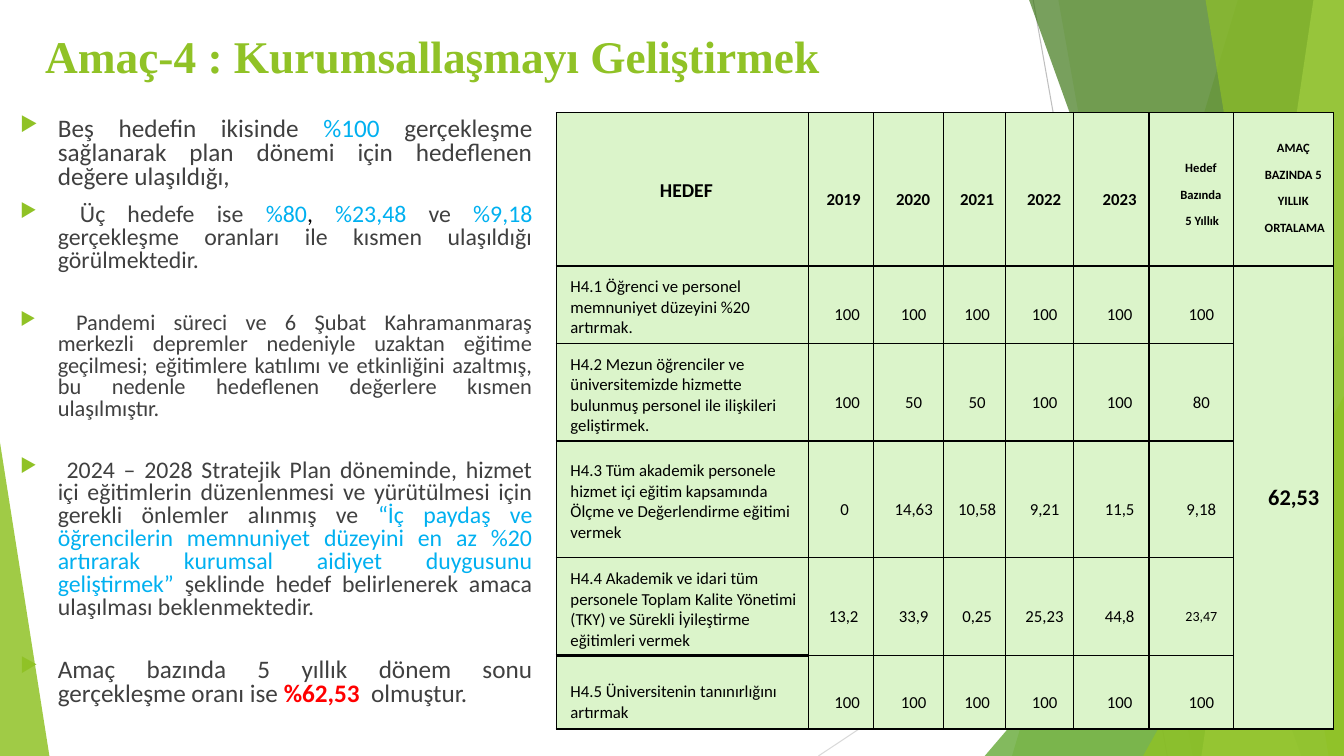
from lxml import etree
from pptx import Presentation
from pptx.dml.color import RGBColor
from pptx.enum.shapes import MSO_CONNECTOR, MSO_SHAPE
from pptx.enum.text import MSO_ANCHOR, PP_ALIGN
from pptx.oxml.ns import qn
from pptx.util import Pt

STRAIGHT = MSO_CONNECTOR.STRAIGHT
TRIANGLE = MSO_SHAPE.ISOSCELES_TRIANGLE
MIDDLE, BOTTOM = MSO_ANCHOR.MIDDLE, MSO_ANCHOR.BOTTOM
LEFT, CENTER, JUSTIFY = PP_ALIGN.LEFT, PP_ALIGN.CENTER, PP_ALIGN.JUSTIFY

GREEN, BLUE, RED, GRAY, BLACK = "90C226", "00B0F0", "FF0000", "404040", "000000"
CELL_FILL = "DBF4CA"
SLIDE_BOX = (0, 0, 960, 540)
TITLE_BOX = (25.2, 15.1, 676.8, 47.5)
BODY_BOX = (7.2, 80.6, 380.2, 444.2)
TABLE_BOX = (397.4, 80.6)

GUIDE_LINES = [((738, 0), (833.8, 540), "BFBFBF"), ((960, 290.2), (584.6, 540), "D9D9D9")]
FACETS = [
    ("band", (884.2, 722.9), GREEN, 30),
    ("band", (756, 851.8), GREEN, 20),
    ("triangle", (703.4, 239.8, 256.6, 300.2, 1), "54A021", 72),
    ("band", (735.1, 929.5), "3F7819", 70),
    ("band", (938.2, 858.2), "C0E474", 70),
    ("band", (861.1, 949), GREEN, 65),
    ("triangle", (816.5, 283, 143.5, 257, 1), GREEN, 80),
    ("triangle", (0, 316.1, 35.3, 223.9, 0), GREEN, 85),
]

BULLETS = [
    (18, 0, [("Beş hedefin ikisinde ", GRAY), ("%100 ", BLUE),
             ("gerçekleşme sağlanarak plan dönemi için hedeflenen değere ulaşıldığı,", GRAY)]),
    (17, 10, [(" Üç hedefe ise ", GRAY), ("%80", BLUE), (", ", BLACK), ("%23,48 ", BLUE),
              ("ve ", GRAY), ("%9,18 ", BLUE),
              ("gerçekleşme oranları ile kısmen ulaşıldığı görülmektedir.", GRAY)]),
    (16, 28.8, [(" Pandemi süreci ve 6 Şubat Kahramanmaraş merkezli depremler nedeniyle uzaktan "
                 "eğitime geçilmesi; eğitimlere katılımı ve etkinliğini azaltmış, bu nedenle "
                 "hedeflenen değerlere kısmen ulaşılmıştır.", GRAY)]),
    (17, 27.8, [(" 2024 – 2028 Stratejik Plan döneminde, hizmet içi eğitimlerin düzenlenmesi ve "
                 "yürütülmesi için gerekli önlemler alınmış ve ", GRAY),
                ("“İç paydaş ve öğrencilerin memnuniyet düzeyini en az %20 artırarak kurumsal "
                 "aidiyet duygusunu geliştirmek” ", BLUE),
                ("şeklinde hedef belirlenerek amaca ulaşılması beklenmektedir.", GRAY)]),
    (18, 27.8, [("Amaç bazında 5 yıllık dönem sonu gerçekleşme oranı ise ", GRAY),
                ("%62,53  ", RED), ("olmuştur.", GRAY)]),
]

COLUMN_WIDTHS = [180, 46.8, 49.7, 44.6, 48.2, 54, 60.5, 71.6]
ROW_HEIGHTS = [109.4, 54, 69.1, 83.5, 69.1, 52.6]
YEARS = ["2019", "2020", "2021", "2022", "2023"]
YEAR_INDENTS = [0, 2.9, 0, 2.9, 8.6]
VALUE_INDENTS = [3.6, 0, 3.6, 8.6, 10.8]
AVERAGE_HEADERS = [["Hedef", "Bazında", " 5 Yıllık"],
                   ["AMAÇ", "BAZINDA 5", "YILLIK", " ORTALAMA"]]
GOALS = [
    ("H4.1 Öğrenci ve personel memnuniyet düzeyini %20 artırmak.", 5,
     ["100", "100", "100", "100", "100", "100"]),
    ("H4.2 Mezun öğrenciler ve üniversitemizde hizmette bulunmuş personel ile ilişkileri "
     "geliştirmek.", 5, ["100", "50", "50", "100", "100", "80"]),
    ("H4.3 Tüm akademik personele hizmet içi eğitim kapsamında Ölçme ve Değerlendirme eğitimi "
     "vermek", 1.4, ["0", "14,63", "10,58", "9,21", "11,5", "9,18"]),
    ("H4.4 Akademik ve idari tüm personele Toplam Kalite Yönetimi (TKY) ve Sürekli İyileştirme "
     "eğitimleri vermek", 0, ["13,2", "33,9", "0,25", "25,23", "44,8", "23,47"]),
    ("H4.5 Üniversitenin tanınırlığını artırmak", 5,
     ["100", "100", "100", "100", "100", "100"]),
]


def color(hex_string):
    """Return the colour for a hex string."""
    return RGBColor.from_string(hex_string)


def apply_format(target, values):
    """Set each attribute named in the dict."""
    for name, value in values.items():
        setattr(target, name, value)


def add_run(paragraph, text, size, hex_string, bold=False, font="Calibri"):
    """Add one formatted run."""
    run = paragraph.add_run()
    run.text = text
    apply_format(run.font, {"size": Pt(size), "bold": bold, "name": font})
    run.font.color.rgb = color(hex_string)


def set_indent(paragraph, margin, first_line=0):
    """Set the left margin and the first line indent."""
    properties = paragraph._p.get_or_add_pPr()
    properties.set("marL", str(Pt(margin)))
    properties.set("indent", str(Pt(first_line)))


def add_bullet(paragraph):
    """Give the paragraph a green arrow bullet."""
    properties = paragraph._p.get_or_add_pPr()
    bullet_color = etree.SubElement(properties, qn("a:buClr"))
    etree.SubElement(bullet_color, qn("a:srgbClr"), val=GREEN)
    etree.SubElement(properties, qn("a:buSzPct"), val="80000")
    etree.SubElement(properties, qn("a:buChar"), char="▶")


def add_text_box(slide, box):
    """Add a wrapping text box and return its frame."""
    frame = slide.shapes.add_textbox(*map(Pt, box)).text_frame
    frame.word_wrap = True
    return frame


def paint_facet(shape, hex_string, opacity):
    """Fill a shape with a see-through colour."""
    shape.shadow.inherit = False
    shape.fill.solid()
    shape.fill.fore_color.rgb = color(hex_string)
    shape.line.fill.background()
    fill_color = shape._element.spPr.find(qn("a:solidFill"))[0]
    etree.SubElement(fill_color, qn("a:alpha"), val=str(opacity * 1000))


def draw_background(slide, box):
    """Draw the guide lines and the green facets."""
    left, top, width, height = box
    for start, end, hex_string in GUIDE_LINES:
        points = [left + start[0], top + start[1], left + end[0], top + end[1]]
        connector = slide.shapes.add_connector(STRAIGHT, *map(Pt, points))
        connector.line.color.rgb = color(hex_string)
        connector.line.width = Pt(0.75)
        etree.SubElement(connector._element.spPr, qn("a:effectLst"))
    right, bottom = left + width, top + height
    for kind, geometry, hex_string, opacity in FACETS:
        if kind == "band":
            upper, lower = geometry
            builder = slide.shapes.build_freeform(Pt(left + upper), Pt(top))
            corners = [(right, top), (right, bottom), (left + lower, bottom)]
            builder.add_line_segments([(Pt(x), Pt(y)) for x, y in corners], close=True)
            shape = builder.convert_to_shape()
        else:
            x, y, facet_width, facet_height, apex = geometry
            frame = (left + x, top + y, facet_width, facet_height)
            shape = slide.shapes.add_shape(TRIANGLE, *map(Pt, frame))
            shape.adjustments[0] = apex
        paint_facet(shape, hex_string, opacity)


def draw_title(slide, box):
    """Write the slide title."""
    frame = add_text_box(slide, box)
    frame.vertical_anchor = BOTTOM
    add_run(frame.paragraphs[0], "Amaç-4 : Kurumsallaşmayı Geliştirmek", 32.4, GREEN, True,
            "Times New Roman")


def draw_findings(slide, box):
    """Write the bulleted findings."""
    frame = add_text_box(slide, box)
    for index, (size, gap, runs) in enumerate(BULLETS):
        paragraph = frame.add_paragraph() if index else frame.paragraphs[0]
        apply_format(paragraph, {"alignment": JUSTIFY, "line_spacing": 0.8,
                                 "space_before": Pt(gap)})
        set_indent(paragraph, 27, -27)
        add_bullet(paragraph)
        for text, hex_string in runs:
            add_run(paragraph, text, size, hex_string, hex_string == RED)


def style_cell(cell, top_line):
    """Give a cell its fill and borders."""
    cell.fill.solid()
    cell.fill.fore_color.rgb = color(CELL_FILL)
    properties = cell._tc.get_or_add_tcPr()
    for index, (side, width) in enumerate([("L", 1), ("R", 1), ("T", top_line), ("B", 1)]):
        line = etree.Element(qn("a:ln" + side), w=str(Pt(width)))
        fill = etree.SubElement(line, qn("a:solidFill"))
        etree.SubElement(fill, qn("a:srgbClr"), val=BLACK)
        properties.insert(index, line)


def write_cell(cell, lines, size=12, bold=False, drop=0, indent=0, first_line=0, gap=0,
               alignment=CENTER, spacing=1.0):
    """Write lines into a cell, lowered by the drop."""
    apply_format(cell, {"vertical_anchor": MIDDLE, "margin_left": Pt(7.9),
                        "margin_right": Pt(4.3), "margin_top": Pt(4.3 + drop),
                        "margin_bottom": Pt(4.3)})
    frame = cell.text_frame
    for index, text in enumerate(lines):
        paragraph = frame.add_paragraph() if index else frame.paragraphs[0]
        apply_format(paragraph, {"alignment": alignment, "line_spacing": spacing,
                                 "space_before": Pt(gap if index else 0)})
        set_indent(paragraph, indent, first_line)
        add_run(paragraph, text, size, BLACK, bold)


def draw_goal_table(slide, box):
    """Draw the table of goals and yearly rates."""
    size = (sum(COLUMN_WIDTHS), sum(ROW_HEIGHTS))
    table = slide.shapes.add_table(len(ROW_HEIGHTS), len(COLUMN_WIDTHS),
                                   *map(Pt, box + size)).table
    apply_format(table, {"first_row": False, "horz_banding": False})
    for column, width in zip(table.columns, COLUMN_WIDTHS):
        column.width = Pt(width)
    last_row = len(GOALS)
    for row_index, height in enumerate(ROW_HEIGHTS):
        table.rows[row_index].height = Pt(height)
        for column_index in range(len(COLUMN_WIDTHS)):
            thick = (row_index, column_index) == (last_row, 0)
            style_cell(table.cell(row_index, column_index), 2 if thick else 1)
    write_cell(table.cell(0, 0), ["HEDEF"], 14, True, indent=2.2, spacing=1.1)
    for index, (year, indent) in enumerate(zip(YEARS, YEAR_INDENTS), 1):
        write_cell(table.cell(0, index), [year], bold=True, drop=14.6, indent=indent)
    for index, lines in enumerate(AVERAGE_HEADERS):
        write_cell(table.cell(0, 6 + index), lines, 9, True, drop=0 if index else 9.5,
                   indent=10.8, first_line=-0.7, gap=9.5, spacing=Pt(9.5))
    for row_index, (goal, first_indent, values) in enumerate(GOALS, 1):
        write_cell(table.cell(row_index, 0), [goal], indent=2.2, alignment=LEFT,
                   drop=14.6 if row_index == last_row else 3.5)
        for index, (value, indent) in enumerate(zip(values, [first_indent] + VALUE_INDENTS), 1):
            write_cell(table.cell(row_index, index), [value], 10 if value == "23,47" else 12,
                       drop=14.6, indent=indent)
    table.cell(1, 7).merge(table.cell(last_row, 7))
    write_cell(table.cell(1, 7), ["62,53"], 16, True, indent=10.8)


def main():
    """Build and save the slide."""
    presentation = Presentation()
    apply_format(presentation, {"slide_width": Pt(960), "slide_height": Pt(540)})
    slide = presentation.slides.add_slide(presentation.slide_layouts[6])
    draw_background(slide, SLIDE_BOX)
    draw_findings(slide, BODY_BOX)
    draw_title(slide, TITLE_BOX)
    draw_goal_table(slide, TABLE_BOX)
    presentation.save("out.pptx")


if __name__ == "__main__":
    main()
